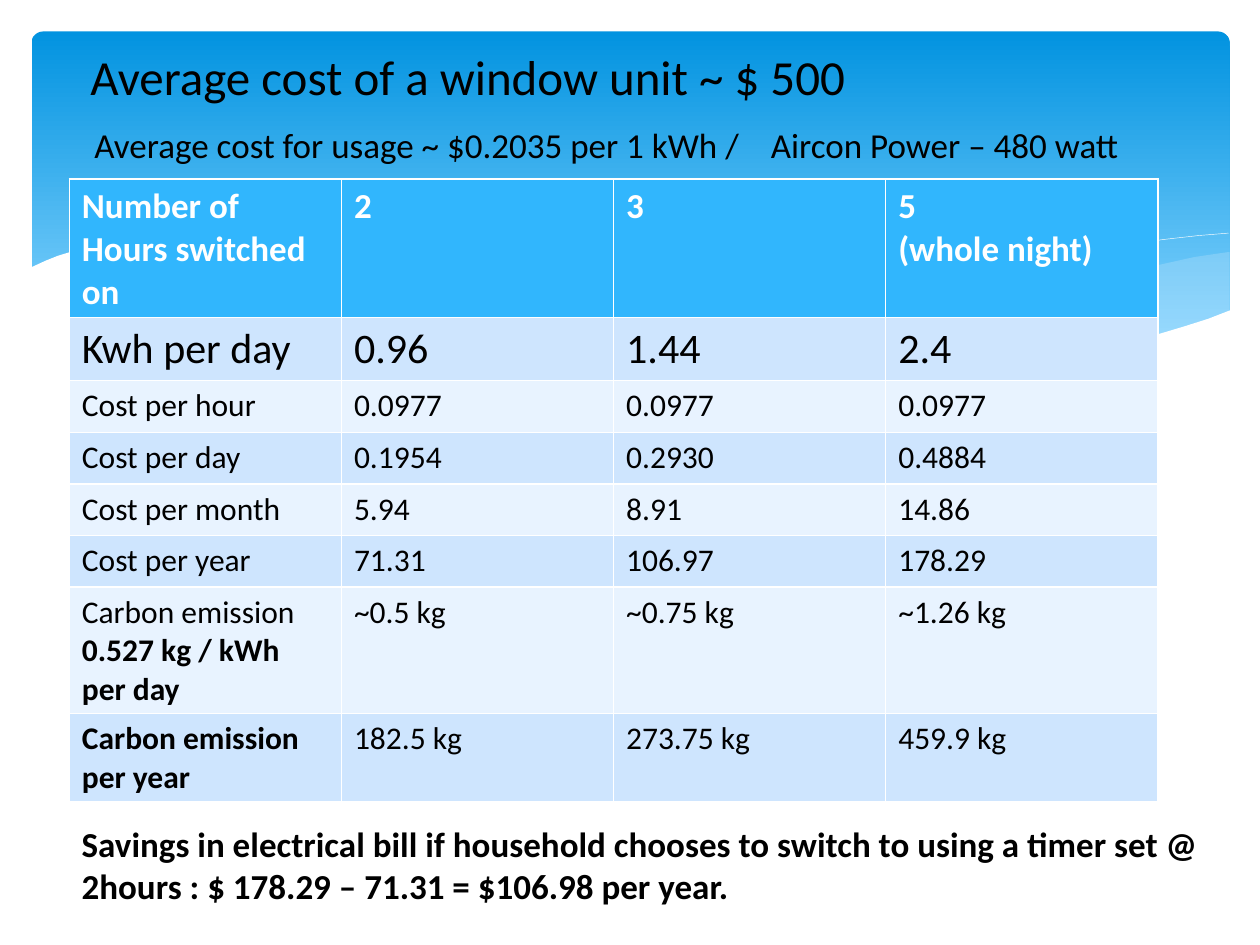
import pptx
import pptx.dml.color
import pptx.enum.shapes
import pptx.oxml
import pptx.oxml.ns
import pptx.util

Inches = pptx.util.Inches
Pt = pptx.util.Pt

COLORS = {
    "black": "000000",
    "white": "FFFFFF",
    "sky_top": "0293E0",
    "sky_bottom": "83D3FE",
    "mist": "C6E7FC",
    "header": "31B6FD",
    "band_dark": "CEE5FE",
    "band_light": "E8F3FF",
}

RIGHT_SWELL = [
    (9.75, 2), (9.48, 2.04), (9.21, 2.1), (8.91, 2.16), (8.61, 2.23), (8.05, 2.37),
    (7.53, 2.48), (7.06, 2.57), (6.61, 2.65), (6.91, 2.69), (7.19, 2.72), (7.45, 2.75),
    (7.81, 2.77), (8.14, 2.78), (8.44, 2.77), (8.72, 2.74), (8.97, 2.7), (9.21, 2.65),
    (9.42, 2.59), (9.63, 2.52), (9.76, 2.47), (9.76, 2),
]
MIDDLE_SWELL = [
    (8.93, 2.73), (8.66, 2.69), (8.07, 2.6), (7.41, 2.47), (6.68, 2.31), (6.13, 2.18),
    (5.69, 2.08), (5.28, 2), (4.89, 1.94), (4.42, 1.89), (3.99, 1.86), (3.61, 1.85),
    (3.28, 1.87), (2.86, 1.91), (3.23, 1.96), (3.62, 2.03), (4.04, 2.11), (4.49, 2.22),
    (5.3, 2.4), (6.01, 2.55), (6.5, 2.64), (6.95, 2.7), (7.36, 2.75), (7.73, 2.77),
    (8.07, 2.78), (8.48, 2.77), (8.76, 2.75),
]
FALLING_CREST = [
    (3.09, 1.95), (3.28, 1.92), (3.53, 1.89), (3.87, 1.87), (4.16, 1.87), (4.5, 1.88),
    (4.89, 1.9), (5.33, 1.94), (5.82, 2), (6.36, 2.08), (6.95, 2.19), (7.6, 2.33),
    (8.31, 2.51), (9.07, 2.72),
]
RISING_CREST = [
    (6.13, 2.57), (6.53, 2.46), (6.95, 2.35), (7.48, 2.23), (8.06, 2.1), (8.66, 1.99),
    (8.95, 1.94), (9.24, 1.9), (9.51, 1.87), (9.75, 1.85),
]
WHITE_WAVE = [
    (9.77, 2.46), (9.59, 2.53), (9.4, 2.59), (9.2, 2.65), (8.99, 2.69), (8.75, 2.73),
    (8.5, 2.75), (8.09, 2.77), (7.61, 2.75), (7.26, 2.72), (6.88, 2.68), (6.48, 2.62),
    (6.03, 2.54), (5.55, 2.45), (5.03, 2.33), (4.47, 2.2), (3.91, 2.07), (3.4, 1.97),
    (2.92, 1.9), (2.5, 1.86), (2.11, 1.84), (1.77, 1.84), (1.46, 1.85), (1.19, 1.87),
    (0.95, 1.91), (0.76, 1.95), (0.59, 1.99), (0.46, 2.03), (0.36, 2.07), (0.23, 2.13),
    (0.23, 3.29), (9.77, 3.29),
]
COST_ROWS = [
    ("Number of Hours switched on", "2", "3", "5\n(whole night)"),
    ("Kwh per day", "0.96", "1.44", "2.4"),
    ("Cost per hour", "0.0977", "0.0977", "0.0977"),
    ("Cost per day", "0.1954", "0.2930", "0.4884"),
    ("Cost per month", "5.94", "8.91", "14.86"),
    ("Cost per year", "71.31", "106.97", "178.29"),
    ("Carbon emission\n0.527 kg / kWh\nper day", "~0.5 kg", "~0.75 kg", "~1.26 kg"),
    ("Carbon emission per year", "182.5 kg", "273.75 kg", "459.9 kg"),
]
BOLD_LABELS = {"0.527 kg / kWh", "per day", "Carbon emission per year"}


def rgb(name):
    return pptx.dml.color.RGBColor.from_string(COLORS[name])


class SlideBuilder:
    """Holds the text style and the current slide, and adds elements to it."""

    font_name = "Calibri"

    def __init__(self, slide):
        self.slide = slide

    def format_paragraph(self, paragraph, size, color="black", bold=False):
        values = {"name": self.font_name, "size": Pt(size), "bold": bold}
        for key, value in values.items():
            setattr(paragraph.font, key, value)
        paragraph.font.color.rgb = rgb(color)

    def sky(self, left, top, width, height):
        shape = self.slide.shapes.add_shape(
            pptx.enum.shapes.MSO_SHAPE.ROUNDED_RECTANGLE,
            Inches(left), Inches(top), Inches(width), Inches(height),
        )
        shape.adjustments[0] = 0.034
        shape.shadow.inherit = False
        shape.line.fill.background()
        shape.fill.gradient()
        shape.fill.gradient_angle = 270
        stops = [(0, "sky_top"), (0.9, "sky_bottom")]
        for stop, (position, color) in zip(shape.fill.gradient_stops, stops):
            stop.position = position
            stop.color.rgb = rgb(color)

    def outline(self, points, closed):
        start, *rest = [(Inches(x), Inches(y)) for x, y in points]
        builder = self.slide.shapes.build_freeform(*start)
        builder.add_line_segments(rest, close=closed)
        shape = builder.convert_to_shape()
        shape.shadow.inherit = False
        return shape

    def wave(self, points, color, opacity=100):
        shape = self.outline(points, True)
        shape.line.fill.background()
        shape.fill.solid()
        shape.fill.fore_color.rgb = rgb(color)
        if opacity < 100:
            fill_color = shape.fill._xPr.find(".//" + pptx.oxml.ns.qn("a:srgbClr"))
            alpha = f'<a:alpha {pptx.oxml.ns.nsdecls("a")} val="{opacity * 1000}"/>'
            fill_color.append(pptx.oxml.parse_xml(alpha))

    def crest(self, points):
        shape = self.outline(points, False)
        shape.fill.background()
        shape.line.color.rgb = rgb("white")
        shape.line.width = Pt(0.25)

    def text(self, text, left, top, width, height, size, bold=False, tab=None):
        box = self.slide.shapes.add_textbox(
            Inches(left), Inches(top), Inches(width), Inches(height)
        )
        box.text_frame.word_wrap = True
        paragraph = box.text_frame.paragraphs[0]
        paragraph.text = text
        self.format_paragraph(paragraph, size, bold=bold)
        if tab:
            stops = (
                f'<a:tabLst {pptx.oxml.ns.nsdecls("a")}>'
                f'<a:tab pos="{Inches(tab)}" algn="l"/></a:tabLst>'
            )
            properties = paragraph._p.get_or_add_pPr()
            properties.insert(0, pptx.oxml.parse_xml(stops))

    def table(self, rows, left, top, column_width, row_height):
        columns = len(rows[0])
        table = self.slide.shapes.add_table(
            len(rows), columns, Inches(left), Inches(top),
            Inches(column_width * columns), Inches(row_height * len(rows)),
        ).table
        sizes = {0: 20, 1: 24}
        for row, values in enumerate(rows):
            header = row == 0
            band = "band_dark" if row % 2 else "band_light"
            for column, value in enumerate(values):
                cell = table.cell(row, column)
                cell.text = value
                cell.fill.solid()
                cell.fill.fore_color.rgb = rgb("header" if header else band)
                for paragraph in cell.text_frame.paragraphs:
                    self.format_paragraph(
                        paragraph, sizes.get(row, 18), "white" if header else "black",
                        header or paragraph.text in BOLD_LABELS,
                    )


def main():
    presentation = pptx.Presentation()
    presentation.slide_width = Inches(10)
    presentation.slide_height = Inches(7.5)
    builder = SlideBuilder(presentation.slides.add_slide(presentation.slide_layouts[6]))

    builder.sky(0.25, 0.25, 9.51, 2.7)
    builder.wave(RIGHT_SWELL, "mist", 29)
    builder.wave(MIDDLE_SWELL, "mist", 40)
    builder.crest(FALLING_CREST)
    builder.crest(RISING_CREST)
    builder.wave(WHITE_WAVE, "white")

    builder.text("Average cost of a window unit ~ $ 500", 0.62, 0.32, 8.5, 0.57, 28)
    builder.table(COST_ROWS, 0.55, 1.42, 2.16, 0.41)
    builder.text(
        "Average cost for usage ~ $0.2035 per 1 kWh /\tAircon Power – 480 watt",
        0.65, 0.93, 8.76, 0.44, 20, tab=5.37,
    )
    builder.text(
        "Savings in electrical bill if household chooses to switch to using a timer set @ "
        "2hours : $ 178.29 – 71.31 = $106.98 per year.",
        0.55, 6.48, 9.26, 0.77, 20, bold=True,
    )
    presentation.save("out.pptx")


if __name__ == "__main__":
    main()
